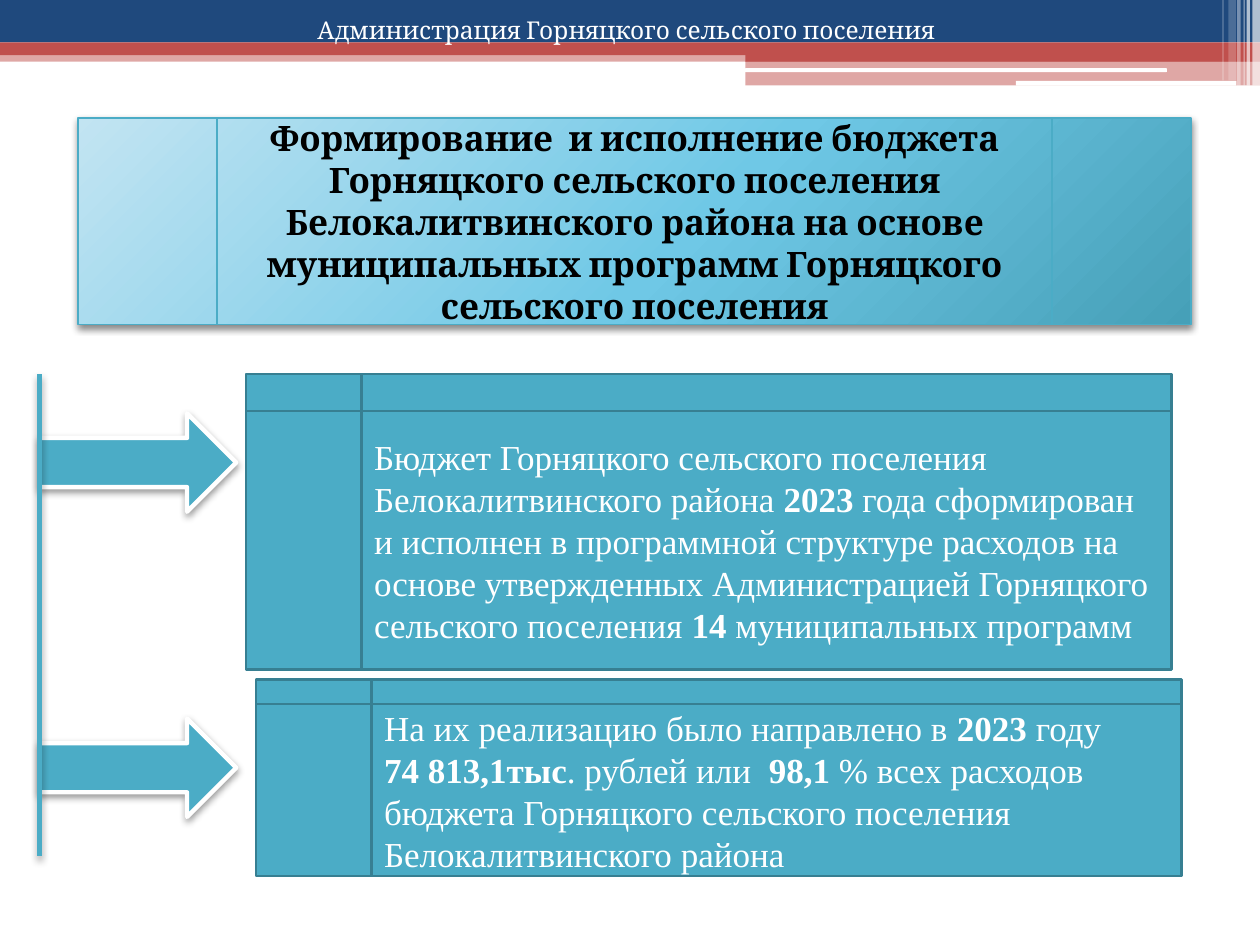
from dataclasses import dataclass

from lxml.etree import SubElement
from pptx import Presentation
from pptx.dml.color import RGBColor
from pptx.enum.shapes import MSO_CONNECTOR as Connector, MSO_SHAPE as Shape
from pptx.enum.text import MSO_ANCHOR as Anchor, PP_ALIGN as Align
from pptx.oxml import parse_xml
from pptx.oxml.ns import nsdecls, qn
from pptx.util import Pt


@dataclass(frozen=True)
class Theme:
    navy: str = "1F497D"
    red: str = "C0504D"
    teal: str = "4BACC6"
    teal_dark: str = "377F92"
    white: str = "FFFFFF"
    black: str = "000000"
    gradient: tuple = ((0, "C2E4F2"), (55, "6FC8E6"), (100, "46A0B8"))
    heading_font: str = "Cambria"
    body_font: str = "Times New Roman"
    title_size: int = 14
    text_size: int = 20


THEME = Theme()

# Header bands: kind, left, top, width, height, colour, opacity in percent
BANDS = [
    (Shape.RECTANGLE, 0, 28.8, 720, 6.5, THEME.red, 50),
    (Shape.RECTANGLE, 0, 0, 720, 24.3, THEME.navy, 100),
    (Shape.RECTANGLE, 0, 24.3, 720, 7.2, THEME.red, 100),
    (Shape.RECTANGLE, 426, 28.1, 294, 7.2, THEME.red, 100),
    (Shape.RECTANGLE, 426, 34.8, 294, 14, THEME.red, 50),
    (Shape.ROUNDED_RECTANGLE, 425.6, 39, 241.2, 2.2, THEME.white, 100),
    (Shape.ROUNDED_RECTANGLE, 580.5, 46.2, 126, 2.7, THEME.white, 100),
]
# Light stripes at the right edge: left, width, height, opacity in percent
STRIPES = [
    (715.7, 4.3, 49, 65),
    (712.3, 2, 49, 65),
    (710.6, 0.7, 49, 60),
    (707, 2, 49, 40),
    (702, 4.3, 46, 20),
    (698.5, 0.7, 46, 30),
]

ORG_NAME = "Администрация Горняцкого сельского поселения"
HEADING = (
    "Формирование  и исполнение бюджета Горняцкого сельского поселения "
    "Белокалитвинского района на основе муниципальных программ "
    "Горняцкого сельского поселения"
)
# Each panel is a list of paragraphs, each paragraph a list of (text, bold)
PROGRAMS_TEXT = [[
    ("Бюджет Горняцкого сельского поселения Белокалитвинского района ", False),
    ("2023", True),
    (" года сформирован и исполнен в программной структуре расходов на основе "
     "утвержденных Администрацией Горняцкого сельского поселения ", False),
    ("14 ", True),
    ("муниципальных программ", False),
]]
SPENDING_TEXT = [
    [("На их реализацию было направлено в ", False), ("2023", True), (" году", False)],
    [("74 813,1тыс", True), (". рублей или  ", False), ("98,1 ", True),
     ("% всех расходов  бюджета Горняцкого сельского поселения "
      "Белокалитвинского района", False)],
]


def set_all(target, values):
    for name, value in values.items():
        setattr(target, name, value)


def set_line(line, color, width):
    line.color.rgb = RGBColor.from_string(color)
    line.width = Pt(width)


def add_block(slide, kind, box, fill, opacity=100, line=None):
    block = slide.shapes.add_shape(kind, *map(Pt, box))
    block.shadow.inherit = False
    block.fill.solid()
    block.fill.fore_color.rgb = RGBColor.from_string(fill)
    if opacity < 100:
        color = block._element.spPr.find(".//" + qn("a:srgbClr"))
        SubElement(color, qn("a:alpha"), val=str(opacity * 1000))
    if line:
        set_line(block.line, *line)
    else:
        block.line.fill.background()
    return block


def add_shadow(element, opacity=45, blur=4):
    properties = element.spPr
    effects = properties.find(qn("a:effectLst"))
    if effects is None:
        effects = SubElement(properties, qn("a:effectLst"))
    shadow = SubElement(effects, qn("a:outerShdw"), blurRad=str(Pt(blur)),
                        dist=str(Pt(2)), dir="5400000", rotWithShape="0")
    color = SubElement(shadow, qn("a:srgbClr"), val=THEME.black)
    SubElement(color, qn("a:alpha"), val=str(opacity * 1000))


def add_gradient(block):
    stops = "".join(
        f'<a:gs pos="{position * 1000}"><a:srgbClr val="{color}"/></a:gs>'
        for position, color in THEME.gradient)
    gradient = parse_xml(
        f'<a:gradFill {nsdecls("a")} rotWithShape="1"><a:gsLst>{stops}</a:gsLst>'
        '<a:path path="circle"><a:fillToRect l="-40000" t="-90000" '
        'r="140000" b="190000"/></a:path></a:gradFill>')
    properties = block._element.spPr
    properties.replace(properties.find(qn("a:solidFill")), gradient)


def write_text(frame, paragraphs, font, size, color, align=Align.LEFT):
    set_all(frame, {"word_wrap": True, "vertical_anchor": Anchor.MIDDLE})
    for index, runs in enumerate(paragraphs):
        paragraph = frame.add_paragraph() if index else frame.paragraphs[0]
        paragraph.alignment = align
        for text, bold in runs:
            run = paragraph.add_run()
            run.text = text
            set_all(run.font, {"name": font, "size": Pt(size), "bold": bold})
            run.font.color.rgb = RGBColor.from_string(color)


def add_header(slide):
    for kind, *box, color, opacity in BANDS:
        add_block(slide, kind, box, color, opacity)
    for left, width, height, opacity in STRIPES:
        add_block(slide, Shape.RECTANGLE, (left, 0, width, height), THEME.white, opacity)


def add_title(slide):
    title = slide.shapes.title
    set_all(title, {"left": Pt(174.2), "top": Pt(-16.6),
                    "width": Pt(890), "height": Pt(67.7)})
    write_text(title.text_frame, [[(ORG_NAME, False)]],
               THEME.heading_font, THEME.title_size, THEME.white)
    # Bring the title in front of the bands
    slide.shapes._spTree.append(title._element)


def add_heading(slide):
    heading = add_block(slide, Shape.FLOWCHART_PREDEFINED_PROCESS,
                        (44.6, 67.5, 636, 118), THEME.teal, line=(THEME.teal, 0.75))
    add_gradient(heading)
    add_shadow(heading._element)
    write_text(heading.text_frame, [[(HEADING, True)]],
               THEME.heading_font, THEME.text_size, THEME.black, Align.CENTER)


def add_arrow(slide, top):
    arrow = add_block(slide, Shape.RIGHT_ARROW, (22.5, top, 112.5, 56.2),
                      THEME.teal, line=(THEME.white, 2.5))
    add_shadow(arrow._element, opacity=40, blur=4.1)


def add_panel(slide, box, paragraphs):
    panel = add_block(slide, Shape.FLOWCHART_INTERNAL_STORAGE, box,
                      THEME.teal, line=(THEME.teal_dark, 1.5))
    write_text(panel.text_frame, paragraphs,
               THEME.body_font, THEME.text_size, THEME.white)


def add_stem(slide):
    stem = slide.shapes.add_connector(Connector.STRAIGHT,
                                      *map(Pt, (22.5, 213.8, 22.5, 489.4)))
    set_line(stem.line, THEME.teal, 2.5)
    add_shadow(stem._element)


def main():
    deck = Presentation()
    set_all(deck, {"slide_width": Pt(720), "slide_height": Pt(540)})
    slide = deck.slides.add_slide(deck.slide_layouts[5])

    # Header and heading
    add_header(slide)
    add_title(slide)
    add_heading(slide)

    # Two statements, each pointed to by an arrow from the stem
    add_arrow(slide, 236.2)
    add_panel(slide, (140.6, 213.8, 528.8, 168.8), PROGRAMS_TEXT)
    add_panel(slide, (146.3, 388.3, 528.8, 112.3), SPENDING_TEXT)
    add_arrow(slide, 410.6)
    add_stem(slide)

    deck.save("out.pptx")


if __name__ == "__main__":
    main()
